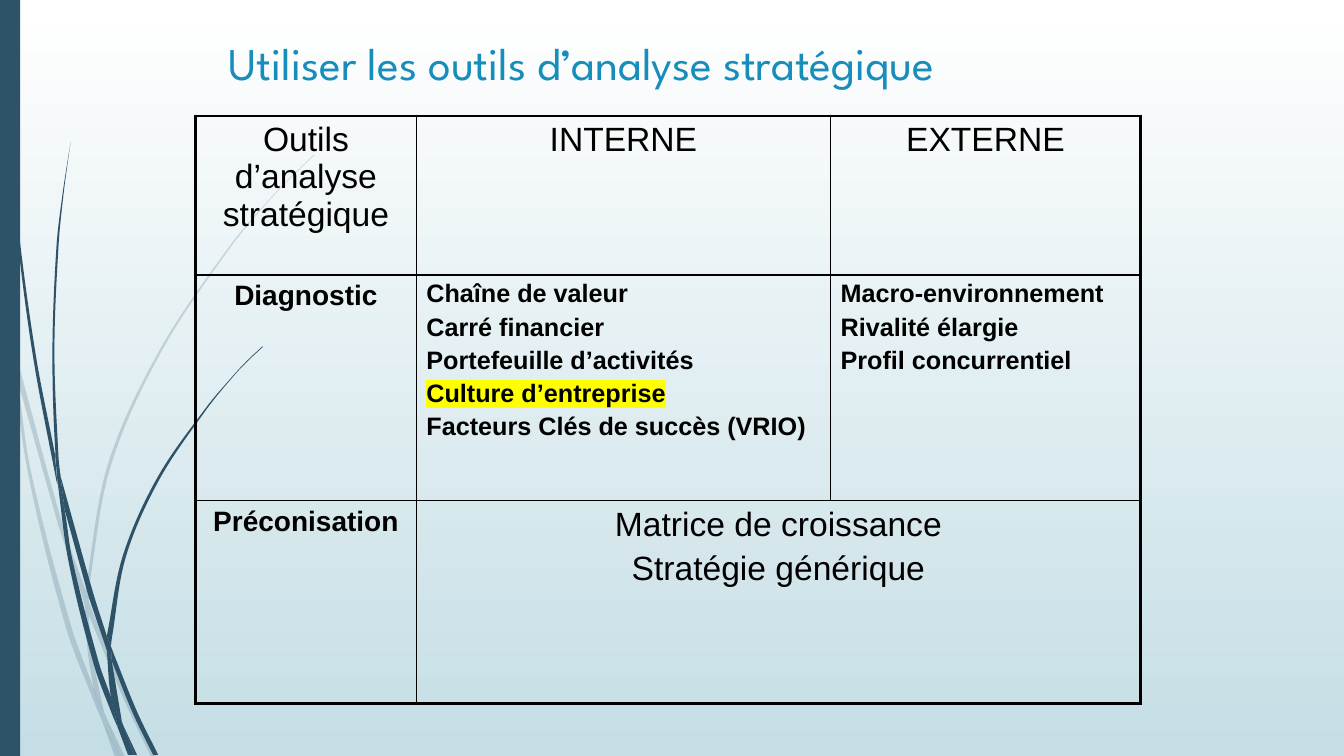
from dataclasses import dataclass

from lxml import etree
from pptx import Presentation
from pptx.dml.color import RGBColor
from pptx.enum.shapes import MSO_SHAPE
from pptx.enum.text import MSO_ANCHOR, PP_ALIGN
from pptx.oxml.ns import qn
from pptx.util import Pt

RECT, TOP = MSO_SHAPE.RECTANGLE, MSO_ANCHOR.TOP
LEFT, CENTER = PP_ALIGN.LEFT, PP_ALIGN.CENTER


@dataclass(frozen=True)
class Theme:
    title_font: str = "League Spartan"
    body_font: str = "Arial"
    title: str = "178DBB"
    text: str = "000000"
    border: str = "000000"
    highlight: str = "FFFF00"
    stalk: str = "2E5369"
    background: tuple = ("FFFFFF", "C5DEE5")
    title_size: float = 32.4
    head_size: float = 24
    label_size: float = 20
    list_size: float = 18
    thin: float = 1
    thick: float = 2.25


THEME = Theme()
HIGHLIGHTED = "Culture d’entreprise"

# Each blade of grass is a list of smooth edges joined by straight lines, in units of 0.72 pt.
UNIT = 0.72
PALE_BLADES = [
    [[(11, 350), (9, 322), (0, 282)], [(0, 299), (10, 344), (11, 350)]],
    [[(58, 522), (84, 599)], [(85, 586), (62, 520), (14, 345)], [(17, 376), (58, 522)]],
    [[(92, 607), (88, 596)], [(88, 610), (123, 694), (150, 751)], [(155, 751), (127, 692), (92, 607)]],
    [[(119, 751), (124, 751)], [(105, 711), (119, 751)]],
    [[(93, 683), (70, 619), (31, 469), (17, 376), (11, 350)],
     [(11, 350), (28, 470), (65, 621), (92, 693), (101, 714)], [(99, 707), (93, 683)]],
    [[(84, 599), (87, 646), (93, 683), (96, 692), (105, 711)],
     [(103, 706), (91, 646), (88, 610), (88, 608)]],
    [[(88, 584), (110, 462), (160, 349), (229, 245), (268, 198), (290, 175), (312, 154)],
     [(312, 153), (289, 175), (268, 197), (228, 244), (158, 348), (107, 461), (85, 584), (85, 586)],
     [(88, 596), (88, 584)]],
    [[(101, 714), (114, 751)], [(119, 751), (101, 714)]],
    [[(88, 608), (88, 610), (88, 596)], [(85, 586), (84, 599)]],
    [[(96, 692), (93, 683), (99, 707), (101, 714), (119, 751)], [(119, 751), (105, 711), (96, 692)]],
]
DARK_BLADES = [
    [[(7, 110), (17, 233), (33, 355), (56, 477), (57, 481)],
     [(55, 457), (55, 453), (36, 355), (19, 232), (8, 109), (5, 48), (4, 0)], [(3, 0), (4, 48), (7, 110)]],
    [[(88, 592), (106, 645)], [(106, 633), (106, 631), (93, 590), (60, 472)], [(64, 505), (88, 592)]],
    [[(113, 649), (110, 641)], [(111, 656), (132, 708), (152, 749)], [(157, 749), (136, 706), (113, 649)]],
    [[(110, 691), (98, 657), (72, 556), (64, 505), (57, 477)],
     [(57, 477), (68, 557), (93, 659), (111, 708), (117, 722)], [(116, 717), (110, 691)]],
    [[(60, 472), (58, 453), (54, 349), (58, 245), (63, 193), (70, 141)],
     [(70, 141), (62, 193), (56, 245), (52, 349), (55, 449), (60, 472)]],
    [[(133, 749), (136, 749)], [(122, 719), (133, 749)]],
    [[(57, 477), (64, 505)], [(60, 472), (55, 449)], [(55, 453), (57, 477)]],
    [[(111, 633), (125, 552), (158, 476), (205, 406), (231, 374), (245, 359), (261, 344)],
     [(260, 344), (245, 358), (231, 373), (204, 405), (156, 474), (122, 551), (106, 631)],
     [(110, 641), (111, 633)]],
    [[(117, 722), (127, 749)], [(131, 749), (117, 722)]],
    [[(106, 645), (110, 691), (116, 706), (122, 719)], [(121, 716), (111, 656)], [(109, 651), (106, 645)]],
    [[(106, 645), (109, 651), (111, 656)], [(110, 641), (106, 631)], [(106, 633), (106, 645)]],
    [[(116, 706), (110, 691), (116, 717), (117, 722), (130, 749)], [(133, 749), (122, 719), (116, 706)]],
]


def rgb(color):
    return RGBColor.from_string(color)


def edge_handles(edge):
    """Bézier handle vectors for each step of an edge, tangents weighted by distance."""
    pts = [complex(x, y) * Pt(UNIT) for x, y in edge]
    triples = list(zip(pts[:1] + pts[:-1], pts, pts[1:] + pts[-1:]))
    tangents = [(c - a) / (abs(b - a) + abs(c - b)) for a, b, c in triples]
    for p, q, m, n in zip(pts, pts[1:], tangents, tangents[1:]):
        reach = abs(q - p) / 3
        yield m * reach, n * reach


def paint(sp, color, alpha=None):
    sp.shadow.inherit = False
    sp.fill.solid()
    sp.fill.fore_color.rgb = rgb(color)
    sp.line.fill.background()
    if alpha is not None:
        clr = sp.fill._xPr.find(qn("a:solidFill"))[0]
        etree.SubElement(clr, qn("a:alpha"), val=str(alpha * 1000))


def curve_segment(line, start, out_handle, in_handle):
    end = complex(int(line[0].get("x")), int(line[0].get("y")))
    curve = etree.Element(qn("a:cubicBezTo"))
    for z in (start + out_handle, end - in_handle, end):
        etree.SubElement(curve, qn("a:pt"), x=str(round(z.real)), y=str(round(z.imag)))
    line.getparent().replace(line, curve)


def add_blade(group, edges, alpha):
    points, handles = [], []
    for edge in edges:
        joined = bool(points) and points[-1] == edge[0]
        points += edge[joined:]
        handles += ([] if joined else [None]) + list(edge_handles(edge))
    points = [(Pt(x * UNIT), Pt(y * UNIT)) for x, y in points]
    builder = group.shapes.build_freeform(*points[0], scale=1.0)
    builder.add_line_segments(points[1:], close=True)
    sp = builder.convert_to_shape()
    paint(sp, THEME.stalk, alpha)
    nodes = [n for n in sp._element.iter(qn("a:moveTo"), qn("a:lnTo"))]
    starts = [complex(int(n[0].get("x")), int(n[0].get("y"))) for n in nodes]
    for line, start, pair in zip(nodes[1:], starts, handles[1:]):
        if pair:
            curve_segment(line, start, *pair)


def add_grass(slide, blades, alpha=None):
    group = slide.shapes.add_group_shape()
    for edges in blades:
        add_blade(group, edges, alpha)


def add_run(p, text, font, size, color, bold=False):
    r = p.add_run()
    r.text = text
    r.font.name, r.font.size, r.font.bold = font, Pt(size), bold
    r.font.color.rgb = rgb(color)
    return r


def highlight(r):
    mark = etree.Element(qn("a:highlight"))
    etree.SubElement(mark, qn("a:srgbClr"), val=THEME.highlight)
    r.font._element.find(qn("a:solidFill")).addnext(mark)


def set_background(slide):
    fill = slide.background.fill
    fill.gradient()
    fill.gradient_angle = 270
    for stop, color in zip(fill.gradient_stops, THEME.background):
        stop.color.rgb = rgb(color)


def add_title(slide, text):
    tf = slide.shapes.add_textbox(Pt(156.2), Pt(21.6), Pt(648), Pt(27.4)).text_frame
    tf.word_wrap, tf.vertical_anchor = True, TOP
    add_run(tf.paragraphs[0], text, THEME.title_font, THEME.title_size, THEME.title)


def set_border(cell, side, width):
    ln = etree.SubElement(cell._tc.get_or_add_tcPr(), qn(f"a:ln{side}"), w=str(Pt(width)))
    fill = etree.SubElement(ln, qn("a:solidFill"))
    etree.SubElement(fill, qn("a:srgbClr"), val=THEME.border)


def fill_cell(cell, lines, size, bold, align):
    tf = cell.text_frame
    for i, line in enumerate(lines):
        p = tf.add_paragraph() if i else tf.paragraphs[0]
        p.alignment = align
        before = etree.SubElement(p._p.get_or_add_pPr(), qn("a:spcBef"))
        etree.SubElement(before, qn("a:spcPct"), val="20000")
        r = add_run(p, line, THEME.body_font, size, THEME.text, bold)
        if line == HIGHLIGHTED:
            highlight(r)


def add_tools_table(slide):
    widths, heights = (157.7, 295.9, 221.3), (113.6, 161.3, 144.9)
    table = slide.shapes.add_table(3, 3, Pt(139.7), Pt(82.8), Pt(sum(widths)), Pt(sum(heights))).table
    table.first_row = table.horz_banding = False
    for col, width in zip(table.columns, widths):
        col.width = Pt(width)
    for row, height in zip(table.rows, heights):
        row.height = Pt(height)
    table.cell(2, 1).merge(table.cell(2, 2))
    head, label = (THEME.head_size, False, CENTER), (THEME.label_size, True, CENTER)
    tools = (THEME.list_size, True, LEFT)
    contents = [
        [(["Outils d’analyse stratégique"], head), (["INTERNE"], head), (["EXTERNE"], head)],
        [(["Diagnostic"], label),
         (["Chaîne de valeur", "Carré financier", "Portefeuille d’activités", HIGHLIGHTED,
           "Facteurs Clés de succès (VRIO)"], tools),
         (["Macro-environnement", "Rivalité élargie", "Profil concurrentiel"], tools)],
        [(["Préconisation"], label), (["Matrice de croissance", "Stratégie générique"], head), ([], head)],
    ]
    for i, row in enumerate(contents):
        for j, (lines, style) in enumerate(row):
            cell = table.cell(i, j)
            fill_cell(cell, lines, *style)
            end = j + (cell.span_width if cell.is_merge_origin else 1)
            for side, outer in zip("LRTB", (j == 0, end == 3, i == 0, i == 2)):
                if not (cell.is_spanned and side == "L"):
                    set_border(cell, side, THEME.thick if outer else THEME.thin)
            cell.fill.background()


def main():
    prs = Presentation()
    prs.slide_width, prs.slide_height = Pt(960), Pt(540)
    slide = prs.slides.add_slide(prs.slide_layouts[6])
    set_background(slide)
    add_grass(slide, PALE_BLADES, alpha=20)
    add_grass(slide, DARK_BLADES)
    paint(slide.shapes.add_shape(RECT, 0, 0, Pt(14.4), prs.slide_height), THEME.stalk)
    add_title(slide, "Utiliser les outils d’analyse stratégique")
    add_tools_table(slide)
    prs.save("out.pptx")


if __name__ == "__main__":
    main()
